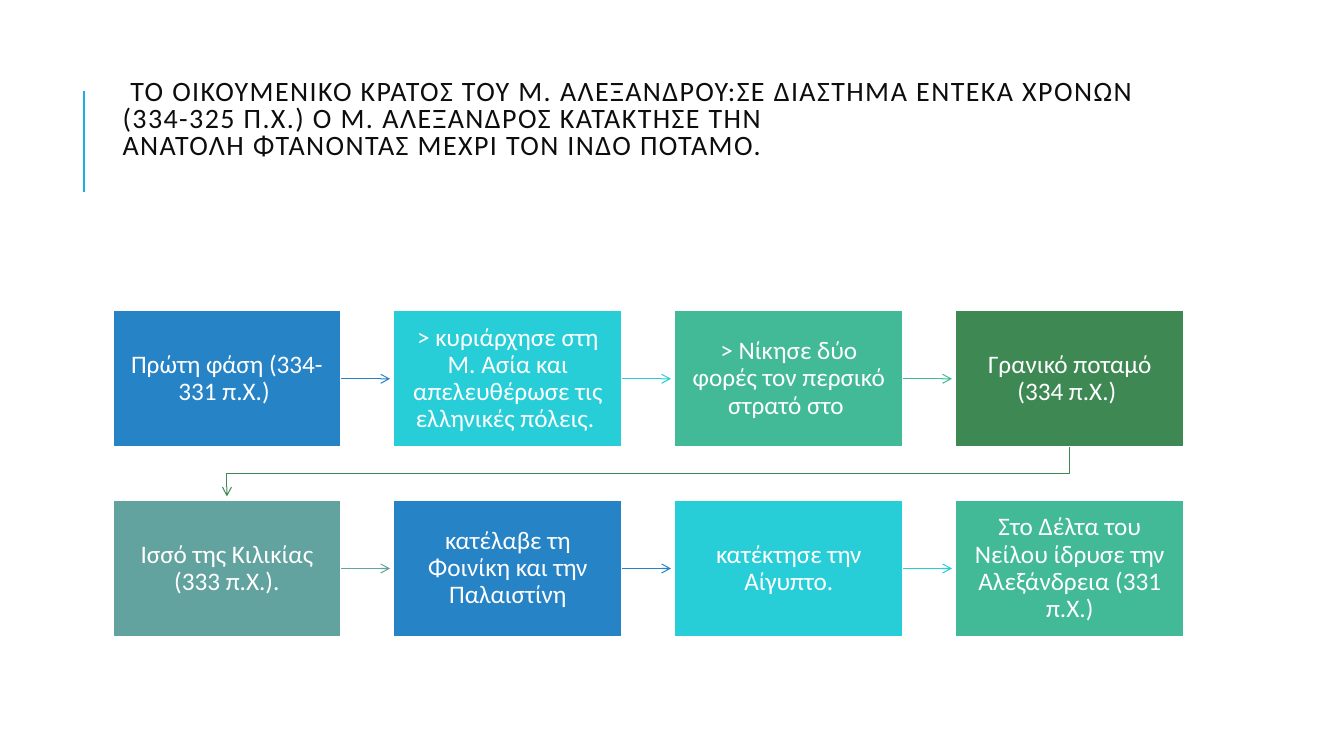
from lxml.etree import SubElement
from pptx import Presentation
from pptx.dml.color import RGBColor
from pptx.enum.lang import MSO_LANGUAGE_ID as Language
from pptx.enum.shapes import MSO_CONNECTOR as Connector, MSO_SHAPE as Shape
from pptx.enum.text import MSO_ANCHOR as Anchor, MSO_AUTO_SIZE as AutoSize, PP_ALIGN as Align
from pptx.oxml.ns import qn
from pptx.util import Cm, Pt

COLOURS = {
    "accent": "1CADE4", "ink": "0D0D0D", "white": "FFFFFF",
    "blue": "2683C6", "cyan": "27CED7", "mint": "42BA97",
    "green": "3E8853", "teal": "62A39F",
}
PHASES = [
    ("Πρώτη φάση (334-331 π.Χ.) ", "blue"),
    ("> κυριάρχησε στη Μ. Ασία και απελευθέρωσε τις ελληνικές πόλεις. ", "cyan"),
    ("> Νίκησε δύο φορές τον περσικό στρατό στο ", "mint"),
    ("Γρανικό ποταμό (334 π.Χ.) ", "green"),
    ("Ισσό της Κιλικίας (333 π.Χ.).", "teal"),
    ("κατέλαβε τη Φοινίκη και την Παλαιστίνη", "blue"),
    ("κατέκτησε την Αίγυπτο.", "cyan"),
    ("Στο Δέλτα του Νείλου ίδρυσε την Αλεξάνδρεια (331 π.Χ.)", "mint"),
]
TITLE = (" Το οικουμενικό κράτος του Μ. Αλεξάνδρου:Σε διάστημα έντεκα χρόνων "
         "(334-325 π.Χ.) ο Μ. Αλέξανδρος κατάκτησε την\v"
         "ανατολή φτάνοντας μέχρι τον Ινδό ποταμό.")
COLUMNS = 4
LEFT, TOP = 2.84, 7.82
WIDTH, HEIGHT = 5.76, 3.45
STEP_X, STEP_Y = 7.08, 4.78
ARROW_GAP = 0.09


def write(shape, text, size, colour, align, line_spacing, margins):
    """Fill a shape with one paragraph; margins are left, top, right, bottom in cm."""
    frame = shape.text_frame
    frame.word_wrap = True
    frame.auto_size = AutoSize.NONE
    frame.vertical_anchor = Anchor.MIDDLE
    (frame.margin_left, frame.margin_top,
     frame.margin_right, frame.margin_bottom) = map(Cm, margins)
    para = frame.paragraphs[0]
    para.text = text
    para.alignment = align
    para.line_spacing = line_spacing
    for span in para.runs:
        span.font.name = "Calibri"
        span.font.size = Pt(size)
        span.font.color.rgb = RGBColor.from_string(COLOURS[colour])
        span.font.language_id = Language.GREEK
    return para


def style_line(shape, colour, width, arrow=True):
    """Colour a line, drop its shadow and optionally put an arrowhead at its end."""
    shape.line.color.rgb = RGBColor.from_string(COLOURS[colour])
    shape.line.width = Pt(width)
    if arrow:
        SubElement(shape.line._get_or_add_ln(), qn("a:tailEnd"), type="arrow")
    properties = shape._element.spPr
    if properties.find(qn("a:effectLst")) is None:
        SubElement(properties, qn("a:effectLst"))


deck = Presentation()
deck.slide_width, deck.slide_height = Cm(33.87), Cm(19.05)
page = deck.slides.add_slide(deck.slide_layouts[5])

title_rule = page.shapes.add_connector(
    Connector.STRAIGHT, Cm(2.12), Cm(4.83), Cm(2.12), Cm(2.29))
style_line(title_rule, "accent", 1.5, arrow=False)

title = page.shapes.title
title.left, title.top, title.width, title.height = Cm(2.84), Cm(1.63), Cm(27), Cm(4.17)
heading = write(title, TITLE, size=20, colour="ink", align=Align.LEFT,
                line_spacing=0.8, margins=(0.25, 0.13, 0.25, 1.48))
for span in heading.runs:
    span.font._element.set("cap", "all")
    span.font._element.set("spc", "100")

boxes = []
for index, (text, colour) in enumerate(PHASES):
    row, column = divmod(index, COLUMNS)
    box = page.shapes.add_shape(
        Shape.RECTANGLE, Cm(LEFT + column * STEP_X), Cm(TOP + row * STEP_Y),
        Cm(WIDTH), Cm(HEIGHT))
    box.shadow.inherit = False
    box.fill.solid()
    box.fill.fore_color.rgb = RGBColor.from_string(COLOURS[colour])
    style_line(box, "white", 1.25, arrow=False)
    write(box, text, size=18, colour="white", align=Align.CENTER,
          line_spacing=0.9, margins=(0.28, 0.3, 0.28, 0.3))
    boxes.append(box)

for index, (box, (text, colour)) in enumerate(zip(boxes, PHASES)):
    if index % COLUMNS == COLUMNS - 1:
        continue
    middle = box.top + box.height // 2
    arrow = page.shapes.add_connector(
        Connector.STRAIGHT, box.left + box.width, middle,
        boxes[index + 1].left - Cm(ARROW_GAP), middle)
    arrow.begin_connect(box, 3)
    style_line(arrow, colour, 0.75)

row_end, row_start = boxes[COLUMNS - 1], boxes[COLUMNS]
start_x = row_end.left + row_end.width // 2
end_x = row_start.left + row_start.width // 2
bottom = row_end.top + row_end.height
bend = (bottom + row_start.top) // 2
builder = page.shapes.build_freeform(start_x, bottom)
builder.add_line_segments(
    [(start_x, bend), (end_x, bend), (end_x, row_start.top - Cm(ARROW_GAP))], close=False)
row_link = builder.convert_to_shape()
row_link.shadow.inherit = False
row_link.fill.background()
style_line(row_link, "green", 0.75)

deck.save("out.pptx")
